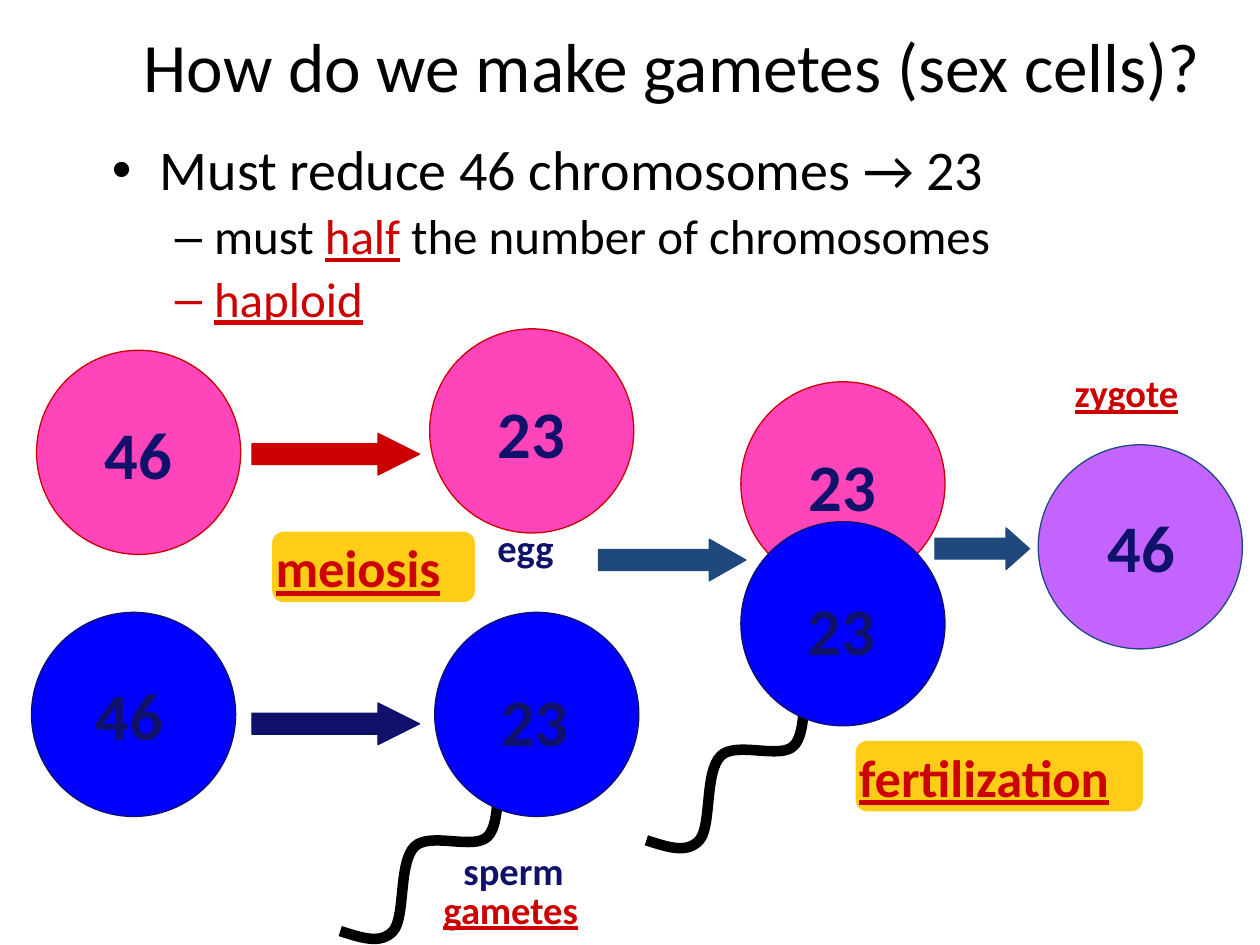
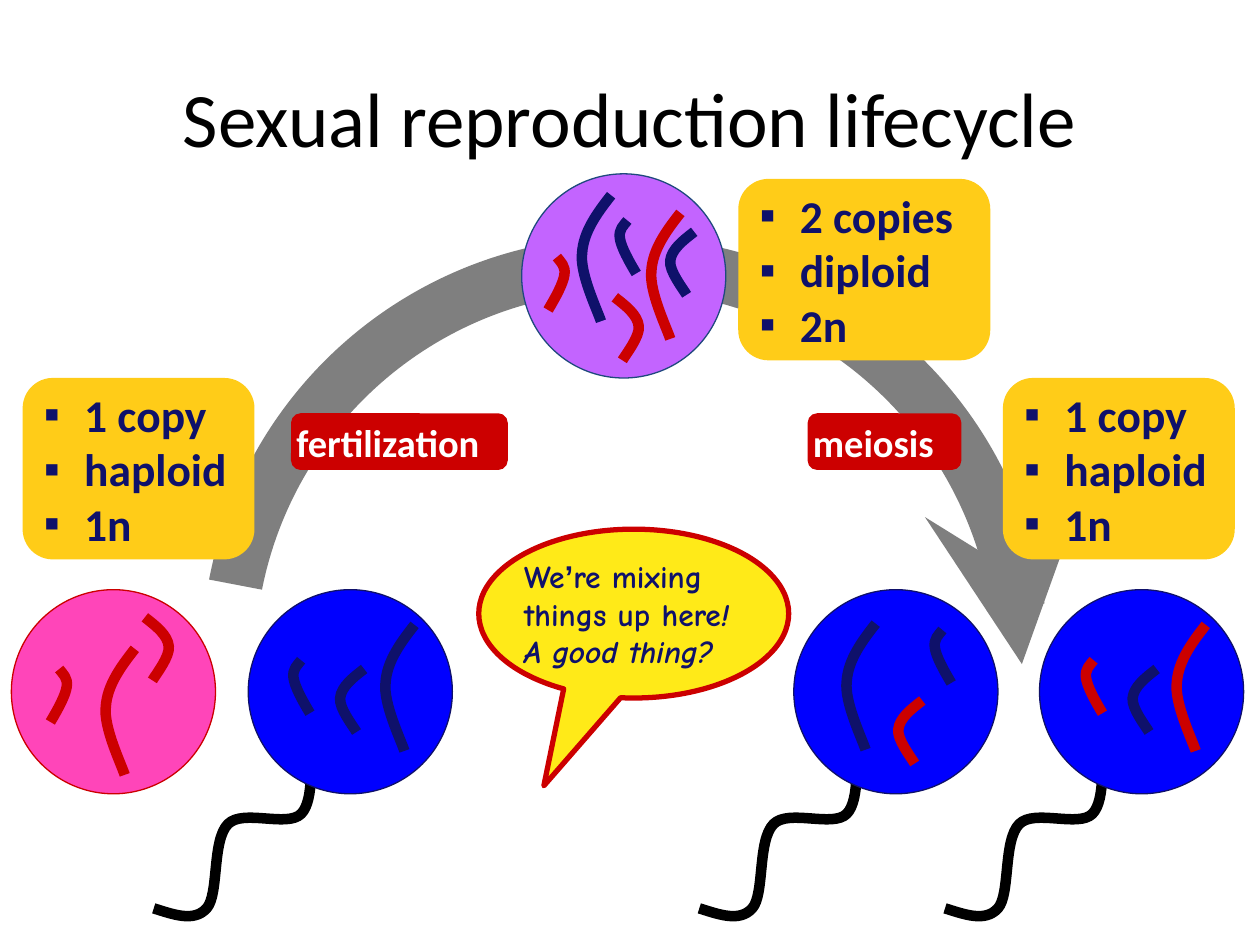
"""Two slides on gametes and the sexual reproduction lifecycle."""
from lxml.etree import SubElement
from pptx import Presentation
from pptx.dml.color import RGBColor
from pptx.enum.shapes import MSO_SHAPE
from pptx.enum.text import MSO_ANCHOR, MSO_AUTO_SIZE, PP_ALIGN
from pptx.oxml.ns import qn
from pptx.util import Pt

PX = 9144
RED, NAVY, STEEL = "CC0000", "0F116A", "1F497D"
GOLD, YELLOW, GREY = "FFCC18", "FFEA18", "7F7F7F"
BLACK, WHITE = "000000", "FFFFFF"
CELL_COLORS = {"egg": ("FF45B9", RED), "sperm": ("0000FF", NAVY),
               "body": ("0000FF", NAVY), "zygote": ("C364FF", STEEL)}
CELL_SIZE = 162
NUMBER_OFFSETS = {"egg": (44, 45), "sperm": (43, 49), "body": (41, 44), "zygote": (45, 44)}
FILLED_NUMBERS = ("egg", "zygote")

TAIL_OFFSET = (-75, 108)
TAIL = [(125, 3), (126, 2), (127, 0), (125, 12), (124, 23), (128, 59), (117, 70), (106, 81),
        (71, 66), (59, 78), (46, 91), (52, 134), (42, 145), (32, 156), (16, 150), (0, 145)]
CHROMOSOMES = {
    "short": [(0, 42), (6, 32), (12, 21), (13, 14), (14, 7), (10, 4), (7, 0)],
    "long": [(25, 0), (14, 14), (3, 29), (2, 46), (0, 62), (14, 91), (17, 100)],
    "bent": [(0, 0), (9, 7), (18, 14), (19, 23), (20, 31), (9, 45), (6, 50)],
}

TITLES = [("How do we make gametes (sex cells)?", (67, -25, 933, 153), 39.6),
          ("Sexual reproduction lifecycle", (50, 30, 900, 125), 44)]
KEY = {"color": RED, "underline": True}
OUTLINE = [
    (32, "•", 38, 38, [("Must reduce 46 chromosomes → 23", {})]),
    (28, "–", 81, 31, [("must ", {}), ("half", KEY), (" the number of chromosomes", {})]),
    (28, "–", 81, 31, [("haploid", KEY)]),
]
TAGS = [("gametes", (350, 701, 128, 41), WHITE, 22), ("zygote", (851, 291, 101, 41), WHITE, 22),
        ("meiosis", (216, 422, 161, 56), GOLD, 30), ("fertilization", (679, 588, 228, 56), GOLD, 30)]
CAPTIONS = [("egg", (385, 411, 74, 47)), ("sperm", (358, 667, 112, 47))]
ARROWS = [((742, 419, 75, 33), STEEL, 0.56), ((200, 344, 133, 33), RED, 1),
          ((200, 558, 133, 33), NAVY, 1), ((475, 428, 117, 33), STEEL, 0.88)]
NUMBERED_CELLS = [("egg", 341, 261, "23"), ("sperm", 345, 486, "23"), ("body", 25, 486, "46"),
                  ("egg", 29, 278, "46"), ("zygote", 824, 353, "46"),
                  ("egg", 588, 303, "23"), ("sperm", 588, 414, "23")]

CYCLE_OUTER = [(829, 479), (807, 316), (671, 193), (506, 188), (341, 183), (197, 298), (166, 460)]
CYCLE_INNER = [(208, 468), (236, 327), (361, 227), (505, 231), (648, 235), (767, 343), (787, 485)]
CYCLE_HEAD = [(802, 452), (806, 483), (810, 515), (811, 527)]
LOADED_CELLS = [
    ("egg", 9, 468, [("short", 31, 63, RED, False), ("long", 73, 47, RED, False),
                     ("bent", 106, 22, RED, False)]),
    ("sperm", 197, 468, [("long", 107, 28, NAVY, False), ("short", 35, 56, NAVY, True),
                         ("bent", 72, 63, NAVY, True)]),
    ("sperm", 825, 468, [("long", 107, 28, RED, False), ("short", 36, 56, RED, True),
                         ("bent", 73, 63, NAVY, True)]),
    ("sperm", 630, 468, [("long", 40, 27, NAVY, False), ("short", 111, 32, NAVY, True),
                         ("bent", 82, 88, RED, True)]),
    ("zygote", 414, 138, [("short", 21, 66, RED, False), ("long", 101, 31, RED, False),
                          ("bent", 74, 98, RED, False), ("long", 46, 17, NAVY, False),
                          ("short", 77, 37, NAVY, True), ("bent", 117, 46, NAVY, True)]),
]
PLOIDY = [((18, 300, 184, 144), ["1 copy", "haploid", "1n"]),
          ((586, 142, 200, 144), ["2 copies", "diploid", "2n"]),
          ((796, 300, 184, 144), ["1 copy", "haploid", "1n"])]
STAGES = [("meiosis", (641, 328, 122, 45)), ("fertilization", (231, 328, 172, 45))]
REMARK = [
    [("We", {}), ("’", {"font": "Arial"}), ("re mixing", {})],
    [("things up here", {}), ("!", {"italic": True})],
    [("A good thing?", {"italic": True})],
]


def emu(lengths):
    return [round(n * PX) for n in lengths]


def rgb(value):
    return RGBColor.from_string(value)


def style(r, size, color=BLACK, font="Calibri", bold=False, italic=False, underline=False):
    f = r.font
    f.size, f.name, f.bold, f.italic, f.underline = Pt(size), font, bold, italic, underline
    f.color.rgb = rgb(color)


def frame(sp, inset=(0, 0, 0, 0), anchor=MSO_ANCHOR.MIDDLE):
    tf = sp.text_frame
    tf.word_wrap, tf.auto_size, tf.vertical_anchor = True, MSO_AUTO_SIZE.NONE, anchor
    tf.margin_left, tf.margin_top, tf.margin_right, tf.margin_bottom = emu(inset)
    return tf


def write(tf, paragraphs, **base):
    for i, runs in enumerate(paragraphs):
        p = tf.paragraphs[0] if i == 0 else tf.add_paragraph()
        p.alignment = PP_ALIGN.LEFT
        for text, extra in runs:
            r = p.add_run()
            r.text = text
            style(r, **{**base, **extra})


def bullet(p, char, left, hang):
    pPr = p._p.get_or_add_pPr()
    pPr.set("marL", str(left * PX))
    pPr.set("indent", str(-hang * PX))
    SubElement(pPr, qn("a:buFont")).set("typeface", "Arial")
    SubElement(pPr, qn("a:buChar")).set("char", char)


def paint(sp, fill=None, line=None, width=0.75):
    sp.shadow.inherit = False
    if fill:
        sp.fill.solid()
        sp.fill.fore_color.rgb = rgb(fill)
    else:
        sp.fill.background()
    if line:
        sp.line.color.rgb = rgb(line)
        sp.line.width = Pt(width)
    else:
        sp.line.fill.background()
    return sp


def preset(shapes, kind, box, *colors):
    return paint(shapes.add_shape(kind, *emu(box)), *colors)


def label(shapes, text, box, size, fill=None):
    if fill:
        sp = preset(shapes, MSO_SHAPE.RECTANGLE, box, fill)
    else:
        sp = shapes.add_textbox(*emu(box))
    write(frame(sp, (10, 5, 10, 5)), [[(text, {})]], size=size, color=NAVY, bold=True)


def curve(shapes, points, close=False, straight=()):
    """Draw cubic curves, three points each, keeping the straight segments named by index."""
    start, *rest = [emu(point) for point in points]
    builder = shapes.build_freeform(*start)
    builder.add_line_segments(rest, close=close)
    sp = builder.convert_to_shape()
    lines = [ln for i, ln in enumerate(sp._element.iter(qn("a:lnTo"))) if i not in straight]
    for i in range(0, len(points) - 1 - len(straight), 3):
        first, *others = lines[i:i + 3]
        first.tag = qn("a:cubicBezTo")
        for ln in others:
            first.append(ln[0])
            ln.getparent().remove(ln)
    return sp


def strand(shapes, points, x, y, color, mirrored=False):
    width = max(px for px, _ in points)
    placed = [(x + (width - px if mirrored else px), y + py) for px, py in points]
    paint(curve(shapes, placed), None, color, 6)


def cell(s, kind, x, y):
    shapes = s.shapes.add_group_shape().shapes
    if kind == "sperm":
        strand(shapes, TAIL, x + TAIL_OFFSET[0], y + TAIL_OFFSET[1], BLACK)
    preset(shapes, MSO_SHAPE.OVAL, (x, y, CELL_SIZE, CELL_SIZE), *CELL_COLORS[kind])
    return shapes


def titled_slide(prs, title, box, size):
    s = prs.slides.add_slide(prs.slide_layouts[5])
    sp = s.shapes.title
    sp.left, sp.top, sp.width, sp.height = emu(box)
    tf = frame(sp, (10, 5, 10, 5))
    tf.text = title
    tf.paragraphs[0].alignment = PP_ALIGN.CENTER
    style(tf.paragraphs[0].runs[0], size)
    return s


def gametes_slide(prs):
    s = titled_slide(prs, *TITLES[0])
    tf = frame(s.shapes.add_textbox(*emu((79, 108, 921, 161))), (10, 5, 10, 5), MSO_ANCHOR.TOP)
    write(tf, [[(text, {"size": size, **extra}) for text, extra in runs]
               for size, _, _, _, runs in OUTLINE])
    for p, (size, char, left, hang, _) in zip(tf.paragraphs, OUTLINE):
        p.line_spacing, p.space_before = 0.9, Pt(size * 0.2)
        bullet(p, char, left, hang)
    for text, box, fill, size in TAGS:
        sp = preset(s.shapes, MSO_SHAPE.ROUNDED_RECTANGLE, box, fill)
        write(frame(sp), [[(text, KEY)]], size=size, bold=True)
    for box, color, head in ARROWS:
        sp = preset(s.shapes, MSO_SHAPE.RIGHT_ARROW, box, color, color)
        sp.adjustments[1] = head
    for kind, x, y, number in NUMBERED_CELLS:
        dx, dy = NUMBER_OFFSETS[kind]
        fill = CELL_COLORS[kind][0] if kind in FILLED_NUMBERS else None
        label(cell(s, kind, x, y), number, (x + dx, y + dy, 79, 73), 38, fill)
    for text, box in CAPTIONS:
        label(s.shapes, text, box, 22)


def lifecycle_slide(prs):
    s = titled_slide(prs, *TITLES[1])
    cycle = s.shapes.add_group_shape().shapes
    band = CYCLE_INNER + CYCLE_OUTER
    paint(curve(cycle, band, True, (len(CYCLE_INNER) - 1, len(band) - 1)[:1]), GREY)
    sp = paint(curve(cycle, CYCLE_HEAD), None, GREY, 30)
    SubElement(sp.line._get_or_add_ln(), qn("a:tailEnd")).set("type", "stealth")
    for kind, x, y, chromosomes in LOADED_CELLS:
        shapes = cell(s, kind, x, y)
        for name, dx, dy, color, mirrored in chromosomes:
            strand(shapes, CHROMOSOMES[name], x + dx, y + dy, color, mirrored)
    for box, lines in PLOIDY:
        tf = frame(preset(s.shapes, MSO_SHAPE.ROUNDED_RECTANGLE, box, GOLD), (10, 0, 0, 0))
        write(tf, [[(line, {})] for line in lines], size=26, color=NAVY, bold=True)
        for p in tf.paragraphs:
            bullet(p, "▪", 32, 32)
    for text, box in STAGES:
        sp = preset(s.shapes, MSO_SHAPE.ROUNDED_RECTANGLE, box, RED)
        write(frame(sp, (2, 2, 2, 2)), [[(text, {})]], size=22, color=WHITE, bold=True)
    sp = preset(s.shapes, MSO_SHAPE.OVAL_CALLOUT, (380, 420, 246, 134), YELLOW, RED, 3)
    sp.adjustments[0], sp.adjustments[1] = -0.29, 1.02
    write(frame(sp), REMARK, size=18, color=NAVY, font="Comic Neue", bold=True)


def main():
    prs = Presentation()
    prs.slide_width, prs.slide_height = emu((1000, 750))
    gametes_slide(prs)
    lifecycle_slide(prs)
    prs.save("out.pptx")


if __name__ == "__main__":
    main()
